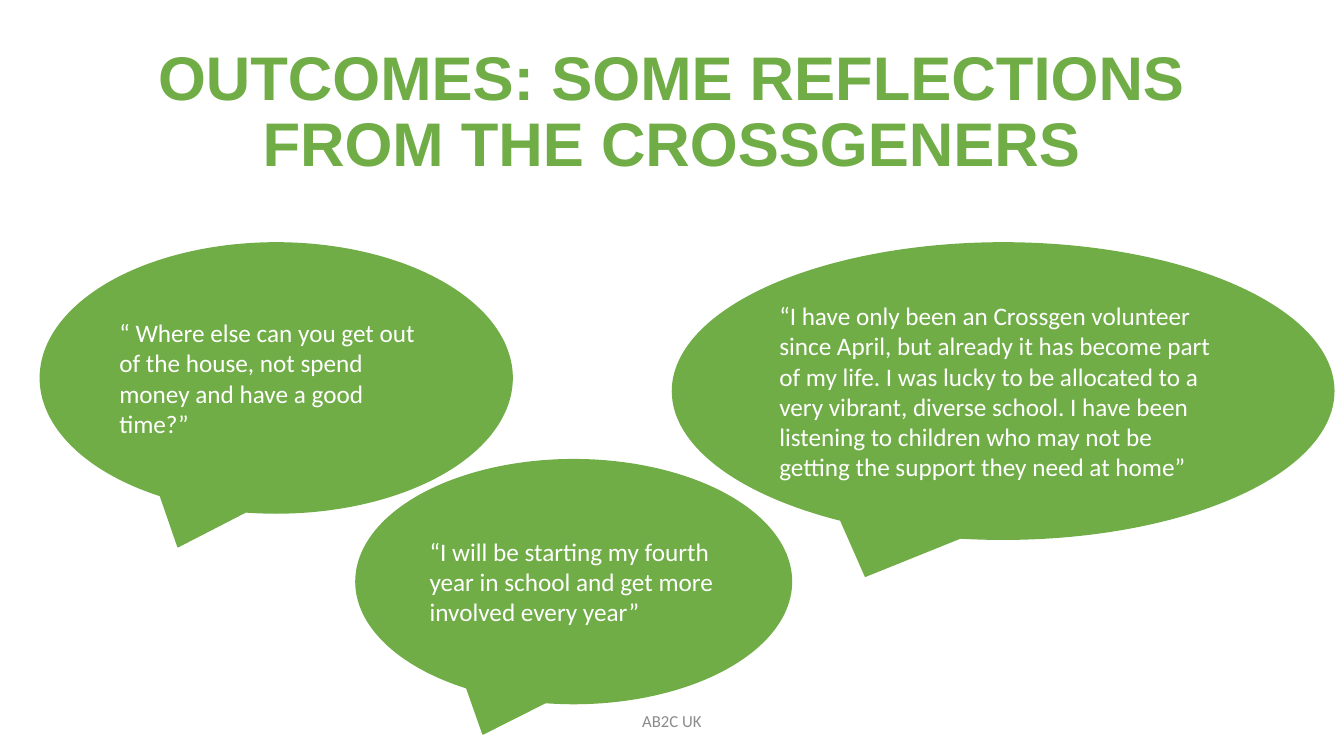
from dataclasses import dataclass

from pptx import Presentation, util as u
from pptx.dml.color import RGBColor
from pptx.enum import shapes, text


@dataclass(frozen=True)
class Theme:
    green: RGBColor = RGBColor(0x70, 0xAD, 0x47)
    white: RGBColor = RGBColor(0xFF, 0xFF, 0xFF)
    grey: RGBColor = RGBColor(0x8C, 0x8C, 0x8C)
    heading_font: str = "Arial"
    body_font: str = "Calibri"
    title_size: int = 44
    quote_size: int = 18
    footer_size: int = 12
    outline: int = 1


THEME = Theme()
WIDTH, HEIGHT = 13.33, 7.5
QUOTE_TOP = 2.41

# Each quote with its box: left, top, width, height in inches
QUOTES = [
    ("“ Where else can you get out of the house, not spend money and have "
     "a good time?”", (0.4, QUOTE_TOP, 4.68, 2.68)),
    ("“I will be starting my fourth year in school and get more involved "
     "every year”", (3.53, 4.56, 4.32, 2.42)),
    ("“I have only been an Crossgen volunteer since April, but already it has "
     "become part of my life. I was lucky to be allocated to a very vibrant, "
     "diverse school. I have been listening to children who may not be "
     "getting the support they need at home”", (6.67, QUOTE_TOP, 6.56, 2.94)),
]


def centred_box(top, width, height):
    return (WIDTH - width) / 2, top, width, height


def inches(box):
    return [u.Inches(length) for length in box]


def write(shape, words, font, size, color, alignment, bold=False):
    """Fill a shape with one middle-anchored, formatted paragraph."""
    frame = shape.text_frame
    frame.text = words
    frame.word_wrap = True
    frame.auto_size = text.MSO_AUTO_SIZE.NONE
    frame.vertical_anchor = text.MSO_ANCHOR.MIDDLE
    paragraph = frame.paragraphs[0]
    paragraph.alignment = alignment
    run_font = paragraph.runs[0].font
    run_font.name, run_font.size, run_font.bold = font, u.Pt(size), bold
    run_font.color.rgb = color
    return paragraph


def add_title(slide, box, words):
    title = slide.shapes.title
    title.left, title.top, title.width, title.height = inches(box)
    paragraph = write(title, words, THEME.heading_font, THEME.title_size,
                      THEME.green, text.PP_ALIGN.CENTER, bold=True)
    paragraph.line_spacing = 0.9


def add_footer(slide, box, words):
    footer = slide.shapes.add_textbox(*inches(box))
    write(footer, words, THEME.body_font, THEME.footer_size,
          THEME.grey, text.PP_ALIGN.CENTER)


def add_quote(slide, box, words):
    bubble = slide.shapes.add_shape(
        shapes.MSO_SHAPE.OVAL_CALLOUT, *inches(box))
    bubble.shadow.inherit = False
    bubble.fill.solid()
    bubble.fill.fore_color.rgb = THEME.green
    bubble.line.color.rgb = THEME.green
    bubble.line.width = u.Pt(THEME.outline)
    write(bubble, words, THEME.body_font, THEME.quote_size,
          THEME.white, text.PP_ALIGN.LEFT)


def build_reflections_slide(presentation):
    title_only = presentation.slide_layouts.get_by_name("Title Only")
    slide = presentation.slides.add_slide(title_only)
    # Heading and footer
    add_title(slide, centred_box(0.4, 11.5, 1.45),
              "OUTCOMES: SOME REFLECTIONS FROM THE CROSSGENERS")
    add_footer(slide, centred_box(6.95, 4.5, 0.4), "AB2C UK")
    # Speech bubbles, back to front
    for words, box in QUOTES:
        add_quote(slide, box, words)


def main():
    presentation = Presentation()
    presentation.slide_width = u.Inches(WIDTH)
    presentation.slide_height = u.Inches(HEIGHT)
    build_reflections_slide(presentation)
    presentation.save("out.pptx")


if __name__ == "__main__":
    main()
